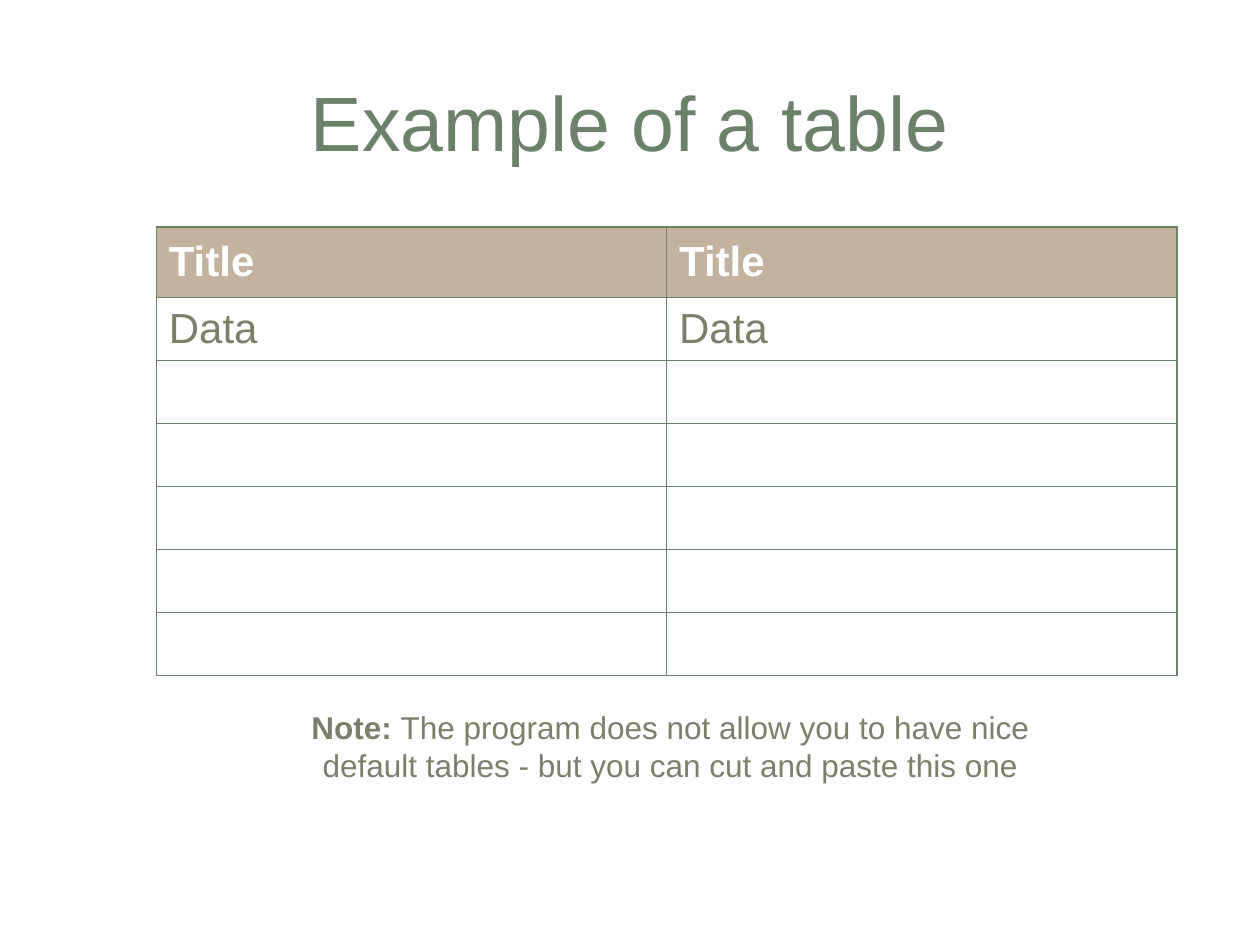
from pptx import Presentation
from pptx.dml.color import RGBColor
from pptx.enum.shapes import MSO_SHAPE
from pptx.enum.text import MSO_ANCHOR, PP_ALIGN
from pptx.oxml.ns import qn
from pptx.util import Inches, Pt
from lxml import etree

RECT = MSO_SHAPE.RECTANGLE
MIDDLE, TOP = MSO_ANCHOR.MIDDLE, MSO_ANCHOR.TOP
CENTER = PP_ALIGN.CENTER
COLORS = {"green": "6C816A", "tan": "C3B29D", "olive": "7A806A", "white": "FFFFFF"}


def add_run(para, text, size, color, bold=False):
    run = para.add_run()
    run.text = text
    run.font.name = "Arial"
    run.font.size = Pt(size)
    run.font.bold = bold
    run.font.color.rgb = RGBColor.from_string(COLORS[color])


def add_border(cell, color, width):
    props = cell._tc.get_or_add_tcPr()
    for side in ("lnL", "lnR", "lnT", "lnB"):
        line = etree.SubElement(props, qn("a:" + side), w=str(Pt(width)))
        fill = etree.SubElement(line, qn("a:solidFill"))
        etree.SubElement(fill, qn("a:srgbClr"), val=COLORS[color])


prs = Presentation()
prs.slide_width, prs.slide_height = Inches(10), Inches(7.5)
slide = prs.slides.add_slide(prs.slide_layouts[6])

# Heading
box = slide.shapes.add_textbox(Inches(0.5), Inches(0.33), Inches(9), Inches(1.25))
frame = box.text_frame
frame.word_wrap = True
frame.vertical_anchor = MIDDLE
para = frame.paragraphs[0]
para.alignment = CENTER
add_run(para, "Example of a table", 44, "green")

# Table: header, one row of data, five empty rows
rows = [["Title"] * 2, ["Data"] * 2] + [[""] * 2] * 5
table = slide.shapes.add_table(
    len(rows), 2, Inches(1.24), Inches(1.8), Inches(8.1), Inches(3.57)
).table
for col in table.columns:
    col.width = Inches(4.05)
for r, texts in enumerate(rows):
    head = r == 0
    table.rows[r].height = Inches(0.56 if head else 0.5)
    for c, text in enumerate(texts):
        cell = table.cell(r, c)
        cell.vertical_anchor = MIDDLE
        add_border(cell, "green", 1)
        if head:
            cell.fill.solid()
            cell.fill.fore_color.rgb = RGBColor.from_string(COLORS["tan"])
        else:
            cell.fill.background()
        if text:
            add_run(cell.text_frame.paragraphs[0], text, 24,
                    "white" if head else "olive", head)

# Note on a translucent panel
note = slide.shapes.add_shape(RECT, Inches(1.95), Inches(5.57), Inches(6.74), Inches(0.7))
note.shadow.inherit = False
note.line.fill.background()
note.fill.solid()
note.fill.fore_color.rgb = RGBColor.from_string(COLORS["white"])
tint = note._element.spPr.find(qn("a:solidFill"))[0]
etree.SubElement(tint, qn("a:alpha"), val="60000")
frame = note.text_frame
frame.word_wrap = True
frame.vertical_anchor = TOP
para = frame.paragraphs[0]
para.alignment = CENTER
add_run(para, "Note: ", 18, "olive", True)
add_run(para, "The program does not allow you to have nice", 18, "olive")
para.add_line_break()
add_run(para, "default tables - but you can cut and paste this one", 18, "olive")

prs.save("out.pptx")
